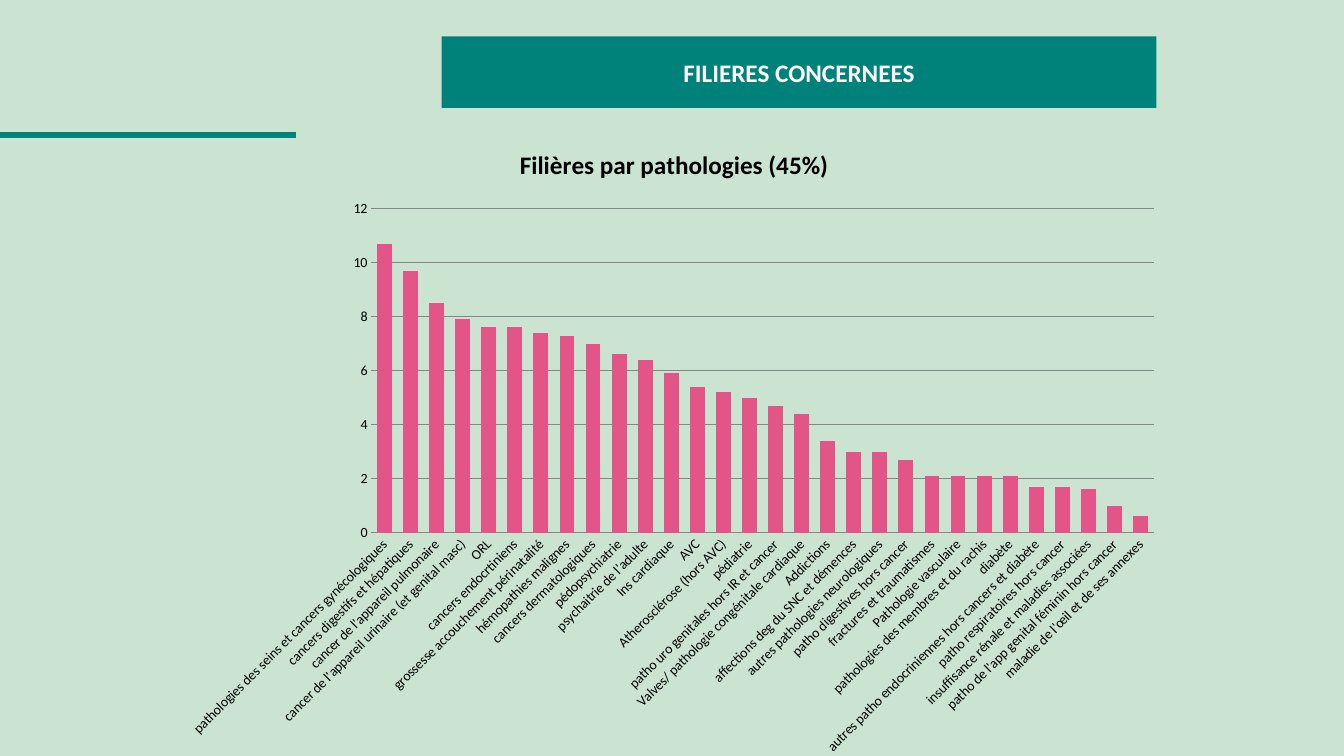
from lxml import etree
from pptx import Presentation
from pptx.chart.data import CategoryChartData as Data
from pptx.dml.color import RGBColor as Rgb
from pptx.enum.chart import XL_CHART_TYPE as Kind, XL_TICK_MARK as Tick
from pptx.enum.shapes import MSO_CONNECTOR as Link
from pptx.enum.text import MSO_ANCHOR as Anchor, PP_ALIGN as Align
from pptx.oxml import parse_xml
from pptx.oxml.ns import nsdecls, qn
from pptx.util import Inches, Pt

WIDE, HIGH = Inches(13.33), Inches(7.5)
FONT = "Calibri"
MINT, TEAL, PINK, GREY = "CBE4D1", "00827A", "E35487", "868686"
BLACK, WHITE = "000000", "FFFFFF"

CARE = {
    "pathologies des seins et cancers gynécologiques": 10.7,
    "cancers digestifs et hépatiques": 9.7,
    "cancer de l'appareil pulmonaire": 8.5,
    "cancer de l'appareil urinaire (et genital masc)": 7.9,
    "ORL": 7.6,
    "cancers endocrtiniens": 7.6,
    "grossesse accouchement périnatalité": 7.4,
    "hémopathies malignes": 7.3,
    "cancers dermatologiques": 7,
    "pédopsychiatrie": 6.6,
    "psychaitrie de l'adulte": 6.4,
    "Ins cardiaque": 5.9,
    "AVC": 5.4,
    "Atherosclérose (hors AVC)": 5.2,
    "pédiatrie": 5,
    "patho uro genitales hors IR et cancer": 4.7,
    "Valves/ pathologie congénitale cardiaque": 4.4,
    "Addictions": 3.4,
    "affections deg du SNC et démences": 3,
    "autres pathologies neurologiques": 3,
    "patho digestives hors cancer": 2.7,
    "fractures et traumatismes": 2.1,
    "Pathologie vasculaire": 2.1,
    "pathologies des membres et du rachis": 2.1,
    "diabète": 2.1,
    "autres patho endocriniennes hors cancers et diabète": 1.7,
    "patho respiratoires hors cancer": 1.7,
    "insuffisance rénale et maladies associées": 1.6,
    "patho de l'app genital féminin hors cancer": 1,
    "maladie de l'œil et de ses annexes": 0.6,
}


def paint(part, tone):
    """Give a fill a solid colour."""
    part.solid()
    part.fore_color.rgb = Rgb.from_string(tone)


def style(font, size, tone, bold=False):
    font.name, font.size, font.bold = FONT, Pt(size), bold
    font.color.rgb = Rgb.from_string(tone)


def area(left, top, width, height):
    """Turn percentages of the slide into lengths."""
    sides = (left, WIDE), (top, HIGH), (width, WIDE), (height, HIGH)
    return [int(side * share / 100) for share, side in sides]


def write(para, text, size, tone):
    run = para.add_run()
    run.text = text
    style(run.font, size, tone, True)


def banner(slide, text, box):
    title = slide.shapes.title
    title.left, title.top, title.width, title.height = box
    paint(title.fill, TEAL)
    frame = title.text_frame
    frame.word_wrap = True
    frame.vertical_anchor = Anchor.MIDDLE
    para = frame.paragraphs[0]
    para.alignment = Align.CENTER
    write(para, text, 18, WHITE)


def rule(slide, box):
    left, top, width, _ = box
    line = slide.shapes.add_connector(
        Link.STRAIGHT, left, top, left + width, top)
    paint(line.line.fill, TEAL)
    line.line.width = Pt(4)
    etree.SubElement(line._element.spPr, qn("a:effectLst"))


def place(chart, **shares):
    """Fix the inner plot area as percentages of the chart."""
    tags = '<c:layoutTarget val="inner"/>'
    tags += "".join(f'<c:{key}Mode val="edge"/>' for key in "xy")
    tags += "".join(f'<c:{key} val="{val / 100:.4f}"/>'
                    for key, val in shares.items())
    node = parse_xml(f'<c:layout {nsdecls("c")}><c:manualLayout>'
                     f'{tags}</c:manualLayout></c:layout>')
    plot = chart._chartSpace.chart.plotArea
    for old in plot.findall(qn("c:layout")):
        plot.remove(old)
    plot.insert(0, node)


def columns(slide, text, values, box):
    data = Data()
    data.categories = list(values)
    data.add_series("Series 1", list(values.values()))
    chart = slide.shapes.add_chart(Kind.COLUMN_CLUSTERED, *box, data).chart
    style(chart.font, 10, BLACK)
    chart.has_legend = False
    chart.has_title = True
    write(chart.chart_title.text_frame.paragraphs[0], text, 18, BLACK)
    chart.chart_title.include_in_layout = False

    plot = chart.plots[0]
    plot.gap_width, plot.overlap = 75, -25
    plot.vary_by_categories = False
    paint(plot.series[0].format.fill, PINK)

    names, scale = chart.category_axis, chart.value_axis
    for axis in (names, scale):
        axis.major_tick_mark = axis.minor_tick_mark = Tick.NONE
        style(axis.tick_labels.font, 10, BLACK)
    names._element.find(qn("c:txPr")).find(qn("a:bodyPr")).set(
        "rot", str(-45 * 60000))
    paint(names.format.line.fill, GREY)
    scale.format.line.fill.background()
    scale.minimum_scale, scale.maximum_scale, scale.major_unit = 0, 12, 2
    scale.has_major_gridlines = True
    paint(scale.major_gridlines.format.line.fill, GREY)
    scale.tick_labels.number_format = "0"
    scale.tick_labels.number_format_is_linked = False
    place(chart, x=19.85, y=13.05, w=77.9, h=50.4)


def main():
    deck = Presentation()
    deck.slide_width, deck.slide_height = WIDE, HIGH
    slide = deck.slides.add_slide(deck.slide_layouts.get_by_name("Title Only"))
    paint(slide.background.fill, MINT)
    rule(slide, area(0, 17.87, 22.06, 0))
    banner(slide, "FILIERES CONCERNEES", area(32.86, 4.8, 53.19, 9.47))
    columns(slide, "Filières par pathologies (45%)", CARE,
            area(12.8, 16.5, 74.72, 85.07))
    deck.save("out.pptx")


if __name__ == "__main__":
    main()
